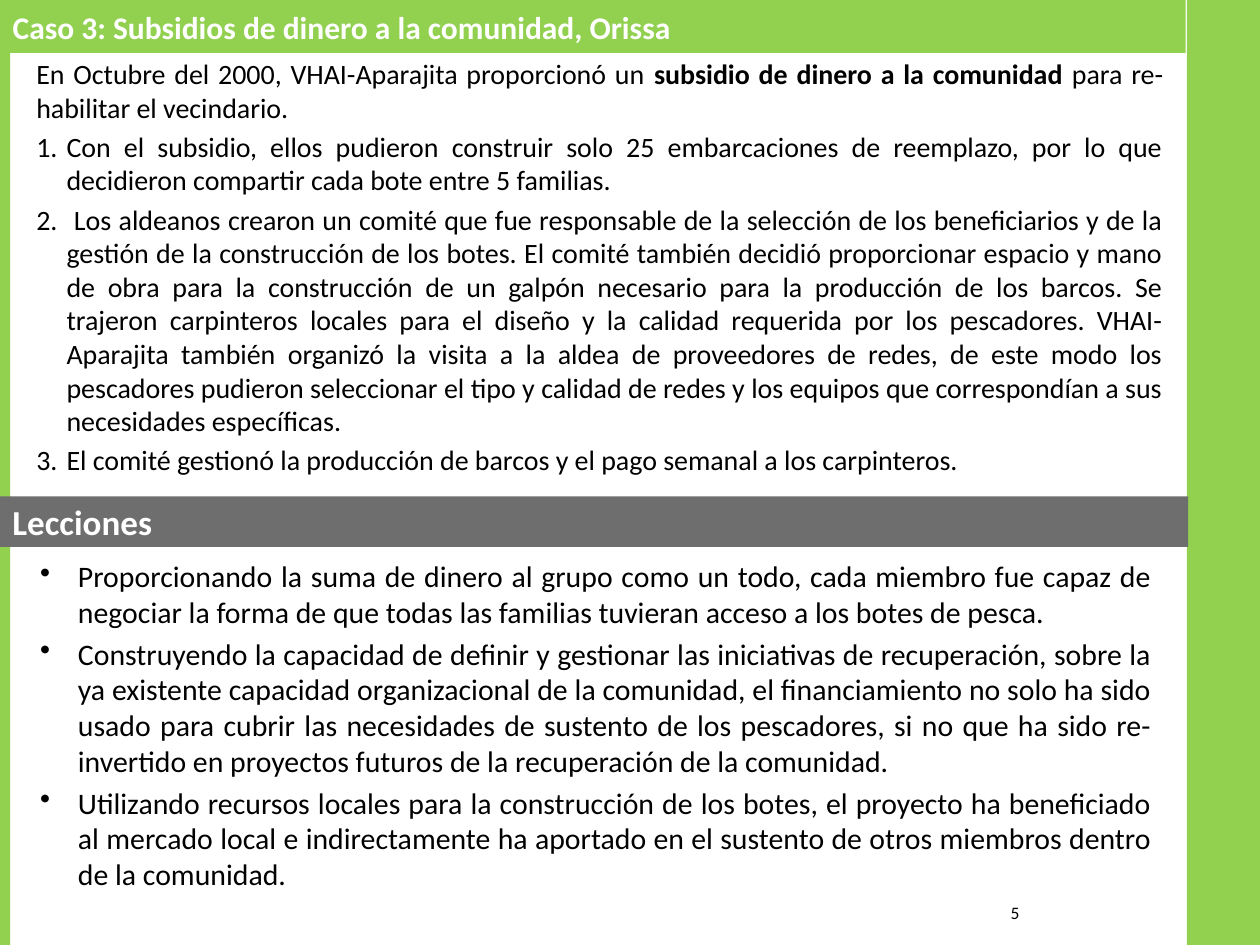
"""Build the slide on community cash grants in Orissa and their lessons."""
from dataclasses import dataclass

import lxml.etree
import pptx
import pptx.dml.color
import pptx.enum.shapes
import pptx.enum.text
import pptx.oxml.ns
import pptx.util
from pptx.util import Inches

COLORS = {"green": "92D050", "grey": "6E6E6E", "white": "FFFFFF", "black": "000000"}
FONT = "Calibri"
ALIGN = pptx.enum.text.PP_ALIGN
ANCHOR = pptx.enum.text.MSO_ANCHOR


@dataclass
class Area:
    left: float
    top: float
    width: float
    height: float

    def lengths(self) -> tuple:
        return tuple(Inches(n) for n in (self.left, self.top, self.width, self.height))


@dataclass
class Span:
    text: str
    bold: bool = False


@dataclass
class Style:
    size: float
    color: str = "black"
    align: ALIGN = ALIGN.LEFT
    anchor: ANCHOR = ANCHOR.TOP


@dataclass
class Marker:
    tag: str
    attributes: dict[str, str]
    indent: float


@dataclass
class Paragraph:
    spans: list[Span]
    marker: Marker | None = None


NUMBER = Marker("a:buAutoNum", {"type": "arabicPeriod"}, 0.24)
BULLET = Marker("a:buChar", {"char": "•"}, 0.3)

GREEN_BANDS = [Area(9.42, 0, 0.58, 7.5), Area(0, 0, 0.08, 7.5)]
TITLE = [Paragraph([Span("Caso 3: Subsidios de dinero a la comunidad, Orissa", True)])]
LESSONS_HEADING = [Paragraph([Span("Lecciones", True)])]
PAGE_NUMBER = [Paragraph([Span("5")])]

CASE = [
    Paragraph([
        Span("En Octubre del 2000, VHAI-Aparajita proporcionó un "),
        Span("subsidio de dinero a la comunidad ", True),
        Span("para re-habilitar el vecindario."),
    ]),
    Paragraph([Span(
        "Con el subsidio, ellos pudieron construir solo 25 embarcaciones de reemplazo, "
        "por lo que decidieron compartir cada bote entre 5 familias."
    )], NUMBER),
    Paragraph([Span(
        " Los aldeanos crearon un comité que fue responsable de la selección de los "
        "beneficiarios y de la gestión de la construcción de los botes. El comité también "
        "decidió proporcionar espacio y mano de obra para la construcción de un galpón "
        "necesario para la producción de los barcos. Se trajeron carpinteros locales para "
        "el diseño y la calidad requerida por los pescadores. VHAI-Aparajita también "
        "organizó la visita a la aldea de proveedores de redes, de este modo los "
        "pescadores pudieron seleccionar el tipo y calidad de redes y los equipos que "
        "correspondían a sus necesidades específicas."
    )], NUMBER),
    Paragraph([Span(
        "El comité gestionó la producción de barcos y el pago semanal a los carpinteros."
    )], NUMBER),
]

LESSONS = [
    Paragraph([Span(
        "Proporcionando la suma de dinero al grupo como un todo, cada miembro fue capaz de "
        "negociar la forma de que todas las familias tuvieran acceso a los botes de pesca."
    )], BULLET),
    Paragraph([Span(
        "Construyendo la capacidad de definir y gestionar las iniciativas de recuperación, "
        "sobre la ya existente capacidad organizacional de la comunidad, el financiamiento "
        "no solo ha sido usado para cubrir las necesidades de sustento de los pescadores, "
        "si no que ha sido re-invertido en proyectos futuros de la recuperación de la "
        "comunidad."
    )], BULLET),
    Paragraph([Span(
        "Utilizando recursos locales para la construcción de los botes, el proyecto ha "
        "beneficiado al mercado local e indirectamente ha aportado en el sustento de otros "
        "miembros dentro de la comunidad."
    )], BULLET),
]


def rgb(name: str) -> pptx.dml.color.RGBColor:
    return pptx.dml.color.RGBColor.from_string(COLORS[name])


def add_marker(para, marker: Marker) -> None:
    properties = para._p.get_or_add_pPr()
    properties.set("marL", str(Inches(marker.indent)))
    properties.set("indent", str(-Inches(marker.indent)))
    lxml.etree.SubElement(properties, pptx.oxml.ns.qn(marker.tag), marker.attributes)


def write(shape, paragraphs: list[Paragraph], style: Style) -> None:
    frame = shape.text_frame
    frame.word_wrap = True
    frame.auto_size = pptx.enum.text.MSO_AUTO_SIZE.NONE
    frame.vertical_anchor = style.anchor
    for index, content in enumerate(paragraphs):
        para = frame.add_paragraph() if index else frame.paragraphs[0]
        if content.marker:
            add_marker(para, content.marker)
        para.alignment = style.align
        para.space_before = pptx.util.Pt(0.2 * style.size if index else 0)
        para.font.size = pptx.util.Pt(style.size)
        for span in content.spans:
            run = para.add_run()
            run.text = span.text
            run.font.name = FONT
            run.font.size = pptx.util.Pt(style.size)
            run.font.bold = span.bold
            run.font.color.rgb = rgb(style.color)


def add_band(page, area: Area, color: str):
    band = page.shapes.add_shape(pptx.enum.shapes.MSO_SHAPE.RECTANGLE, *area.lengths())
    band.shadow.inherit = False
    band.fill.solid()
    band.fill.fore_color.rgb = rgb(color)
    band.line.fill.background()
    return band


def add_text(page, area: Area, paragraphs: list[Paragraph], style: Style) -> None:
    write(page.shapes.add_textbox(*area.lengths()), paragraphs, style)


def format_title(page, area: Area) -> None:
    title = page.shapes.title
    title.left, title.top, title.width, title.height = area.lengths()
    title.fill.solid()
    title.fill.fore_color.rgb = rgb("green")
    write(title, TITLE, Style(18, "white", anchor=ANCHOR.MIDDLE))


def main() -> None:
    deck = pptx.Presentation()
    deck.slide_width, deck.slide_height = Inches(10), Inches(7.5)
    page = deck.slides.add_slide(deck.slide_layouts[5])
    for area in GREEN_BANDS:
        add_band(page, area, "green")
    format_title(page, Area(0, 0, 9.41, 0.42))
    add_text(page, Area(0.19, 0.4, 9.14, 3.49), CASE, Style(16, align=ALIGN.JUSTIFY))
    add_text(page, Area(0.22, 4.38, 9.02, 2.69), LESSONS, Style(17, align=ALIGN.JUSTIFY))
    heading = add_band(page, Area(0, 3.94, 9.43, 0.4), "grey")
    write(heading, LESSONS_HEADING, Style(20, "white", anchor=ANCHOR.MIDDLE))
    number_style = Style(10, align=ALIGN.RIGHT, anchor=ANCHOR.MIDDLE)
    add_text(page, Area(7.11, 7.08, 1.08, 0.33), PAGE_NUMBER, number_style)
    deck.save("out.pptx")


if __name__ == "__main__":
    main()
